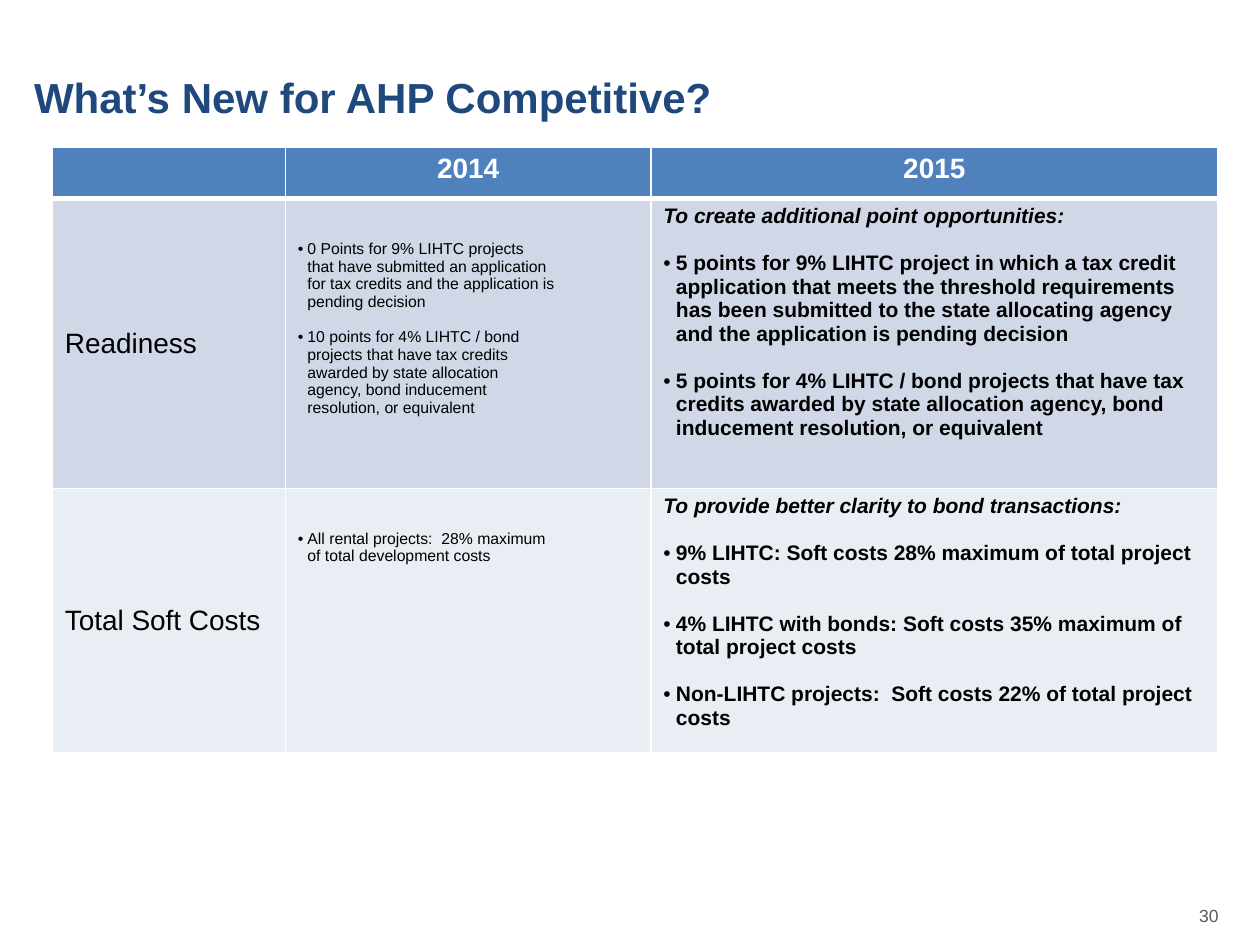
from lxml.etree import SubElement
from pptx import Presentation
from pptx.dml.color import RGBColor
from pptx.enum.text import MSO_ANCHOR, PP_ALIGN
from pptx.oxml.ns import qn
from pptx.util import Inches, Pt

WIDTH, HEIGHT = 10, 7.5
FONT = "Arial"
HEADER_FILL, ROW_FILLS = "4F81BD", ("D0D8E8", "E9EDF4")
WHITE, BLACK, NAVY, GREY = "FFFFFF", "000000", "1F497D", "595959"
COLUMNS = (1.85, 2.9, 4.5)
ROWS = (0.4, 2.3, 2.1)
LINE = 1.12  # line height as a share of the text size

YEARS = ("2014", "2015")
# Topic, points for 2014, lead-in for 2015, points for 2015
TOPICS = (
    (
        "Readiness",
        (
            "0 Points for 9% LIHTC projects\vthat have submitted an application\v"
            "for tax credits and the application is\vpending decision",
            "10 points for 4% LIHTC / bond\vprojects that have tax credits\v"
            "awarded by state allocation\vagency, bond inducement\v"
            "resolution, or equivalent",
        ),
        "To create additional point opportunities:",
        (
            "5 points for 9% LIHTC project in which a tax credit application "
            "that meets the threshold requirements has been submitted to the "
            "state allocating agency and the application is pending decision",
            "5 points for 4% LIHTC / bond projects that have tax credits awarded "
            "by state allocation agency, bond inducement resolution, or equivalent",
        ),
    ),
    (
        "Total Soft Costs",
        ("All rental projects:  28% maximum\vof total development costs",),
        "To provide better clarity to bond transactions:",
        (
            "9% LIHTC: Soft costs 28% maximum of total project costs",
            "4% LIHTC with bonds: Soft costs 35% maximum of total project costs",
            "Non-LIHTC projects:  Soft costs 22% of total project costs",
        ),
    ),
)


def rgb(value):
    return RGBColor.from_string(value)


def style(paragraph, size, color=BLACK, bold=False, italic=False, align=PP_ALIGN.LEFT):
    paragraph.alignment = align
    for run in paragraph.runs:
        font = run.font
        font.name, font.size, font.bold, font.italic = FONT, Pt(size), bold, italic
        font.color.rgb = rgb(color)


def place(shape, left, top, width, height):
    shape.left, shape.top = Inches(left), Inches(top)
    shape.width, shape.height = Inches(width), Inches(height)


def add_bullet(paragraph, indent):
    properties = paragraph._p.get_or_add_pPr()
    properties.set("marL", str(Inches(indent)))
    properties.set("indent", str(-Inches(indent)))
    SubElement(properties, qn("a:buFont"), typeface=FONT)
    SubElement(properties, qn("a:buChar"), char="•")


def format_cell(cell, fill, bottom=1):
    properties = cell._tc.get_or_add_tcPr()
    for side, weight in (("L", 1), ("R", 1), ("T", 1), ("B", bottom)):
        border = SubElement(properties, qn(f"a:ln{side}"), w=str(Pt(weight)))
        SubElement(SubElement(border, qn("a:solidFill")), qn("a:srgbClr"), val=WHITE)
    cell.fill.solid()
    cell.fill.fore_color.rgb = rgb(fill)


def fill_points(cell, points, size, bold=False, lead=None):
    """Write an optional lead-in and bullets, one line of space apart."""
    frame = cell.text_frame
    entries = ([lead] if lead else []) + list(points)
    for index, entry in enumerate(entries):
        paragraph = frame.paragraphs[0] if index == 0 else frame.add_paragraph()
        paragraph.text = entry
        is_lead = entry == lead
        if index:
            paragraph.space_before = Pt(round(size * LINE, 1))
        if not is_lead:
            add_bullet(paragraph, size / 120)
        style(paragraph, size, bold=bold, italic=is_lead)


def add_title(slide, left, top, width, height):
    title = slide.shapes.title
    place(title, left, top, width, height)
    frame = title.text_frame
    frame.text = "What’s New for AHP Competitive?"
    frame.vertical_anchor = MSO_ANCHOR.MIDDLE
    style(frame.paragraphs[0], 24, NAVY, bold=True)


def add_comparison(slide, left, top):
    table = slide.shapes.add_table(
        len(ROWS), len(COLUMNS), Inches(left), Inches(top),
        Inches(sum(COLUMNS)), Inches(sum(ROWS)),
    ).table
    table.horz_banding = False
    for column, width in zip(table.columns, COLUMNS):
        column.width = Inches(width)
    for row, height in zip(table.rows, ROWS):
        row.height = Inches(height)

    # Header row
    for cell, year in zip(table.rows[0].cells, ("", *YEARS)):
        format_cell(cell, HEADER_FILL, bottom=3)
        cell.text_frame.text = year
        style(cell.text_frame.paragraphs[0], 16, WHITE, bold=True, align=PP_ALIGN.CENTER)

    # Topic rows
    for number, (topic, before, lead, after) in enumerate(TOPICS, start=1):
        label, old, new = table.rows[number].cells
        for cell in (label, old, new):
            format_cell(cell, ROW_FILLS[number - 1])
        label.text_frame.text = topic
        label.vertical_anchor = MSO_ANCHOR.MIDDLE
        style(label.text_frame.paragraphs[0], 16)
        old.margin_top = Inches(0.33)
        fill_points(old, before, 9)
        fill_points(new, after, 12, bold=True, lead=lead)


def add_page_number(slide, left, top, width, height):
    number = slide.shapes.add_textbox(0, 0, 0, 0)
    place(number, left, top, width, height)
    frame = number.text_frame
    frame.word_wrap = True
    frame.vertical_anchor = MSO_ANCHOR.MIDDLE
    frame.text = "30"
    style(frame.paragraphs[0], 10, GREY, align=PP_ALIGN.RIGHT)


def main():
    deck = Presentation()
    deck.slide_width, deck.slide_height = Inches(WIDTH), Inches(HEIGHT)
    slide = deck.slides.add_slide(deck.slide_layouts[5])
    add_title(slide, 0.17, 0.35, 9.42, 0.83)
    add_comparison(slide, (WIDTH - sum(COLUMNS)) / 2 + 0.04, 1.17)
    add_page_number(slide, 9.13, 7.07, 0.64, 0.4)
    deck.save("out.pptx")


if __name__ == "__main__":
    main()
